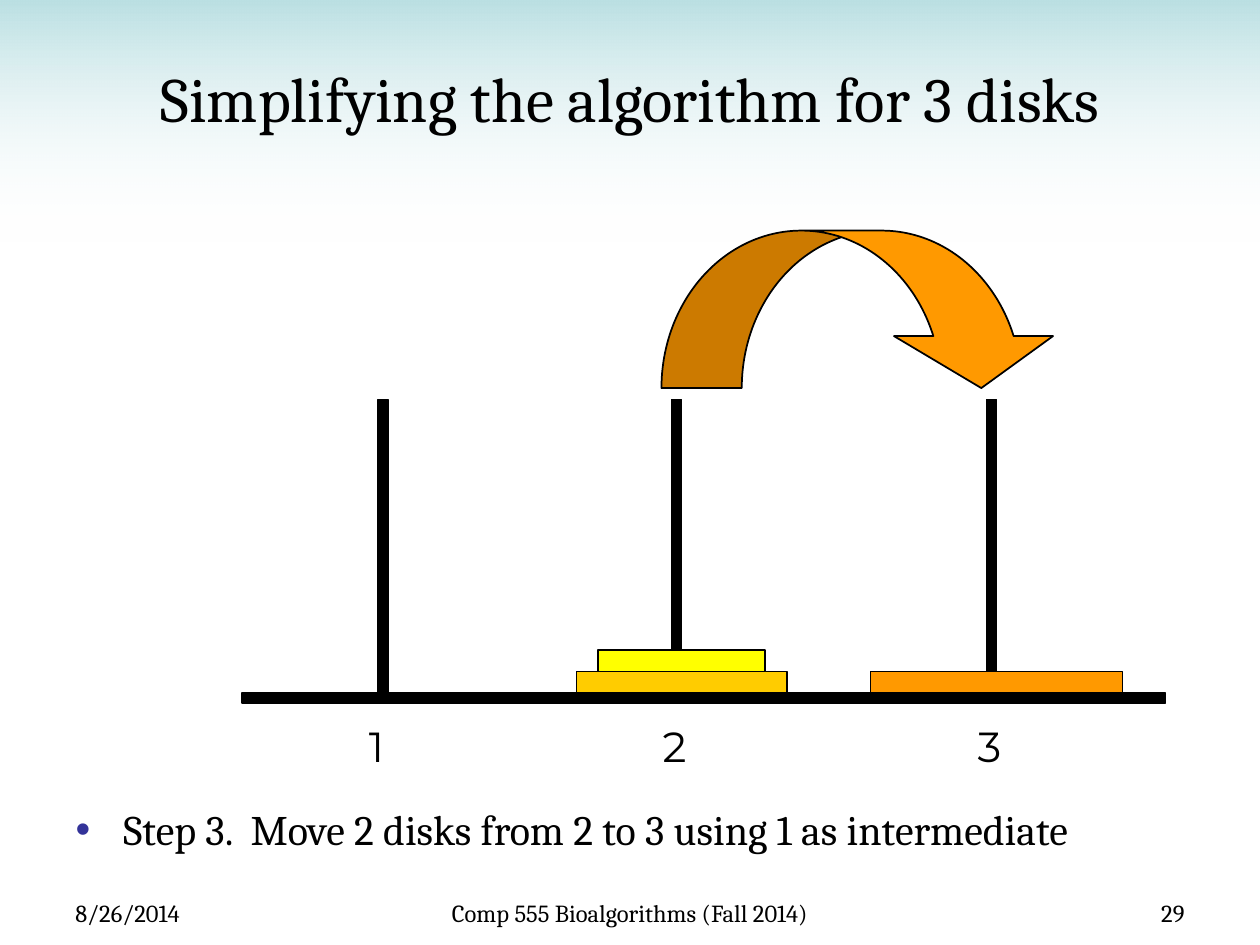
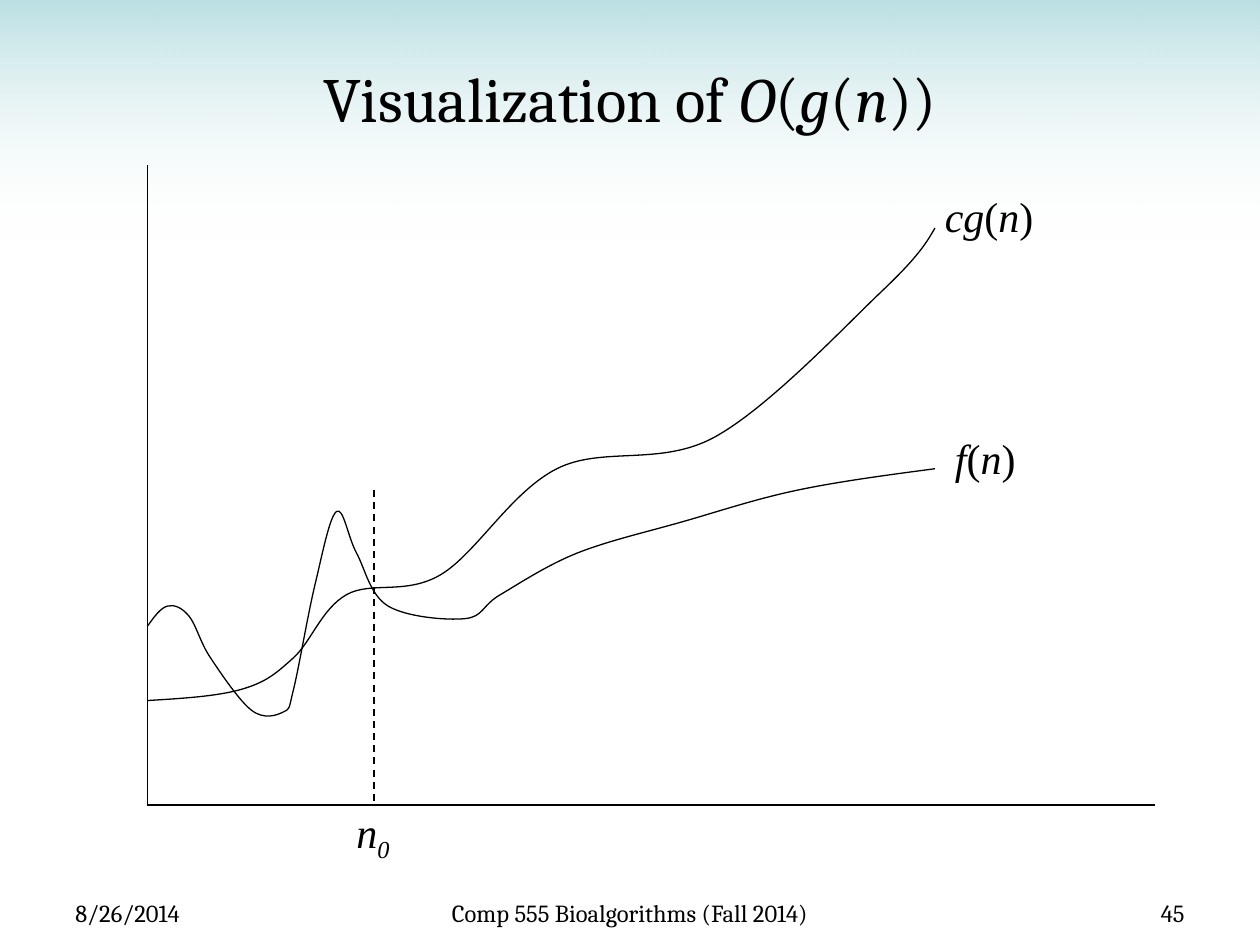
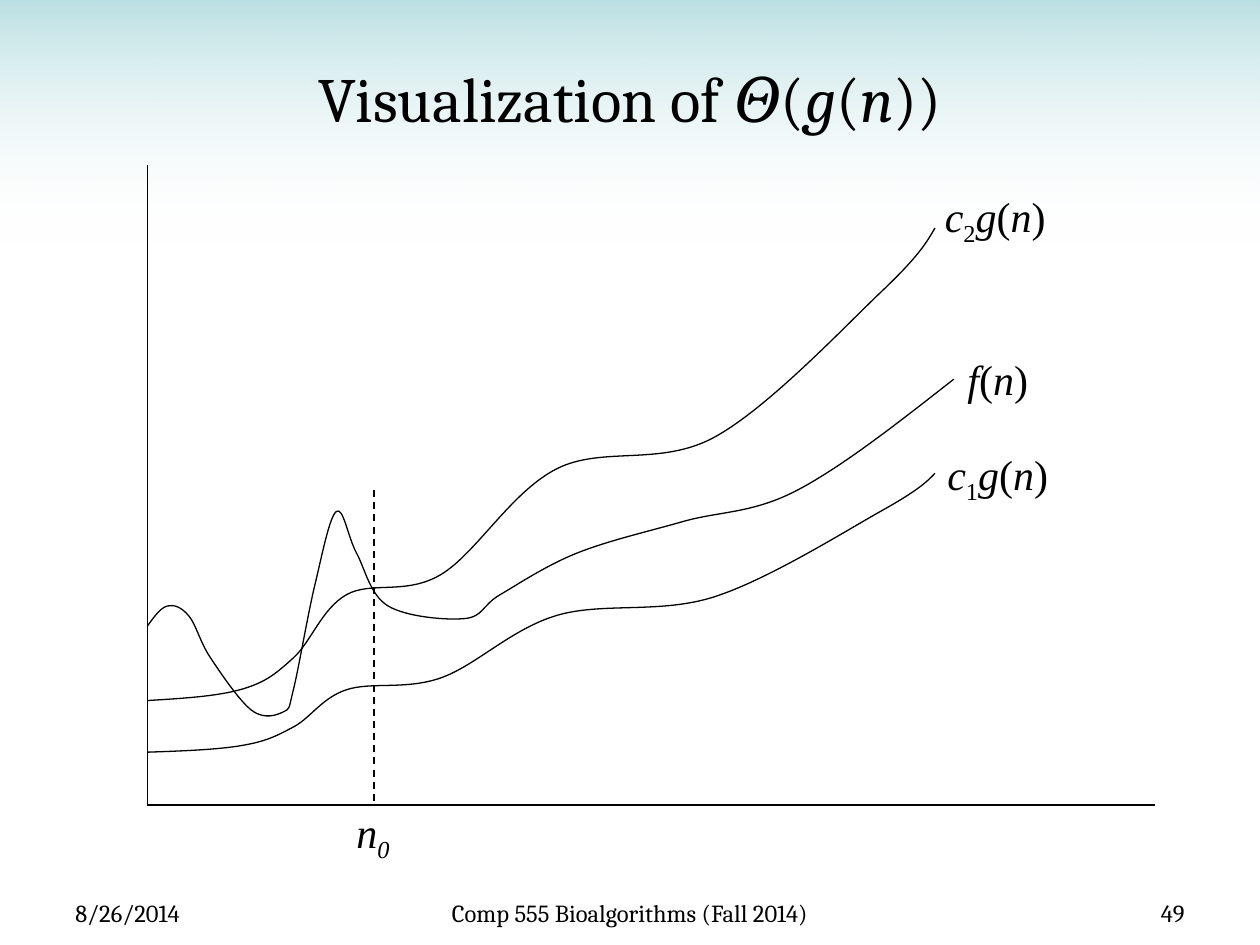
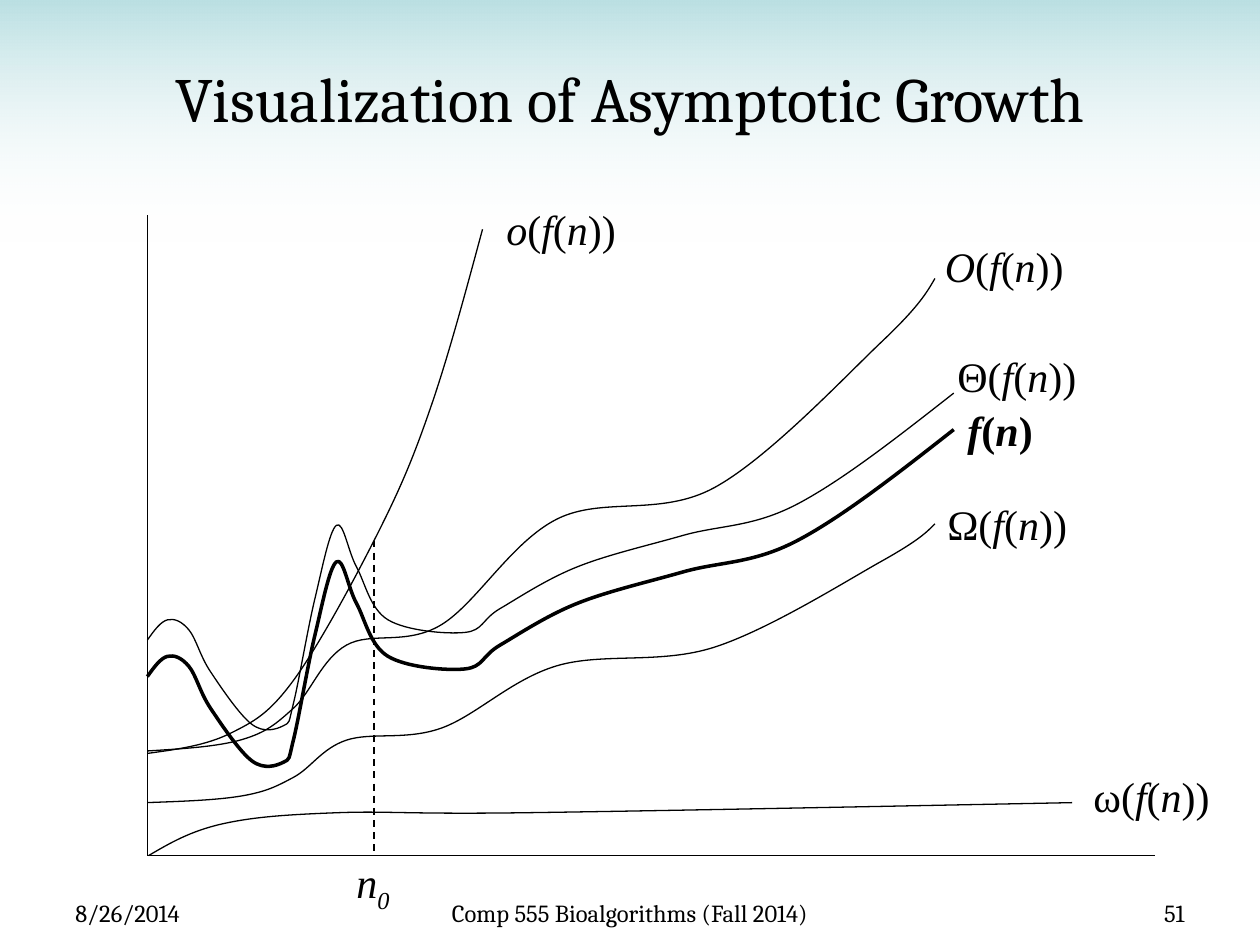
from dataclasses import dataclass

from lxml.etree import SubElement
from pptx import Presentation
from pptx.dml.color import RGBColor
from pptx.enum.dml import MSO_LINE
from pptx.enum.shapes import MSO_CONNECTOR, MSO_SHAPE
from pptx.enum.text import MSO_ANCHOR, MSO_AUTO_SIZE, PP_ALIGN
from pptx.oxml.ns import qn
from pptx.util import Inches, Pt

BLACK = "000000"
BAND_TOP = "BBE0E3"
BAND_BOTTOM = "FDFEFE"
BULLET = "333399"
ORANGE = "FF9900"
GOLD = "FFCC00"
YELLOW = "FFFF00"

SERIF = "Cambria"
SANS = "Montserrat"
MATH = "Times New Roman"
TITLE_SIZE, BODY_SIZE, FOOTER_SIZE = 36, 24, 14

TITLE_AND_BODY = 1
TITLE_ONLY = 5
DATE = "8/26/2014"
COURSE = "Comp 555 Bioalgorithms (Fall 2014)"
FOOTER_TOP, FOOTER_HEIGHT = 7.08, 0.27

PEG_LEFTS = (3, 5.33, 7.83)
PEG_TOP, PEG_WIDTH, PEG_HEIGHT = 3.17, 0.08, 2.33
BASE_TOP = PEG_TOP + PEG_HEIGHT
DISK_HEIGHT = 0.17

AXIS_LEFT, AXIS_RIGHT = 1.17, 9.17
AXIS_TOP, AXIS_BOTTOM = 1.31, 6.39
THRESHOLD, THRESHOLD_HEIGHT = 2.97, 2.5
GROWTH_DROP = 0.4
THIN, THICK = 0.75, 2


def color(value):
    return RGBColor.from_string(value)


def place(shape, left, top, width, height):
    shape.left, shape.top = Inches(left), Inches(top)
    shape.width, shape.height = Inches(width), Inches(height)


def write(paragraph, markup, font_name, size, bold=False):
    for index, piece in enumerate(markup.split("*")):
        if not piece:
            continue
        is_subscript = piece.isdigit() and len(paragraph.runs) > 0
        run = paragraph.add_run()
        run.text = piece
        font = run.font
        font.name, font.size = font_name, Pt(size)
        font.color.rgb = color(BLACK)
        font.bold, font.italic = bold, index % 2 == 1
        if is_subscript:
            font._element.set("baseline", "-25000")


def add_text(slide, left, top, width, height, markup, font_name, size,
             align=PP_ALIGN.LEFT, wrap=True, bold=False):
    box = slide.shapes.add_textbox(
        Inches(left), Inches(top), Inches(width), Inches(height))
    box.text_frame.word_wrap = wrap
    if not wrap:
        box.text_frame.auto_size = MSO_AUTO_SIZE.SHAPE_TO_FIT_TEXT
    paragraph = box.text_frame.paragraphs[0]
    paragraph.alignment = align
    write(paragraph, markup, font_name, size, bold)


def add_label(slide, left, top, width, markup, font_name=MATH, bold=False):
    add_text(slide, left, top, width, 0.5, markup, font_name, BODY_SIZE,
             wrap=False, bold=bold)


def add_filled(slide, kind, left, top, width, height, fill):
    shape = slide.shapes.add_shape(
        kind, Inches(left), Inches(top), Inches(width), Inches(height))
    shape.shadow.inherit = False
    shape.fill.solid()
    shape.fill.fore_color.rgb = color(fill)
    shape.line.color.rgb = color(BLACK)
    shape.line.width = Pt(1)
    return shape


def add_bar(slide, left, top, width, height, fill=BLACK):
    return add_filled(slide, MSO_SHAPE.RECTANGLE, left, top, width, height, fill)


def add_line(slide, start, end, width=THIN, dashed=False):
    x1, y1, x2, y2 = map(Inches, start + end)
    connector = slide.shapes.add_connector(MSO_CONNECTOR.STRAIGHT, x1, y1, x2, y2)
    connector.line.color.rgb = color(BLACK)
    connector.line.width = Pt(width)
    if dashed:
        connector.line.dash_style = MSO_LINE.DASH
    SubElement(connector._element.spPr, qn("a:effectLst"))


def midpoint(first, second):
    return tuple((a + b) / 2 for a, b in zip(first, second))


def smooth_controls(knots):
    arriving, leaving = {}, {}
    for index in range(1, len(knots) - 1):
        before, knot, after = knots[index - 1:index + 2]
        reach = [(b - a) / 6 for a, b in zip(before, after)]
        arriving[index] = tuple(k - r for k, r in zip(knot, reach))
        leaving[index] = tuple(k + r for k, r in zip(knot, reach))
    last = len(knots) - 1
    leaving[0] = midpoint(knots[0], arriving[1])
    arriving[last] = midpoint(knots[last], leaving[last - 1])
    return [point for index in range(last)
            for point in (leaving[index], arriving[index + 1], knots[index + 1])]


def add_curve(slide, knots, width=THIN):
    points = [knots[0]] + smooth_controls(knots)
    start, *rest = [(Inches(x), Inches(y)) for x, y in points]
    builder = slide.shapes.build_freeform(*start)
    builder.add_line_segments(rest, close=False)
    curve = builder.convert_to_shape()
    segments = curve._element.findall(".//" + qn("a:lnTo"))
    outline = segments[0].getparent()
    for index in range(0, len(segments), 3):
        bezier = SubElement(outline, qn("a:cubicBezTo"))
        for segment in segments[index:index + 3]:
            bezier.append(segment[0])
            outline.remove(segment)
    curve.shadow.inherit = False
    curve.fill.background()
    curve.line.color.rgb = color(BLACK)
    curve.line.width = Pt(width)


def move_knots(knots, down, stretch=1):
    first = knots[0][1]
    return [(x, first + (y - first) * stretch + down) for x, y in knots]


UPPER_BOUND = [(1.17, 5.56), (1.92, 5.47), (2.33, 5.22), (2.75, 4.72), (3.5, 4.56),
               (4.42, 3.72), (5.67, 3.47), (7, 2.31), (7.42, 1.81)]
LOWER_BOUND = move_knots(UPPER_BOUND, down=0.41, stretch=0.59)

FIRST_HUMP = [(1.17, 4.97), (1.33, 4.81), (1.5, 4.89), (1.67, 5.22)]
VALLEY = [(2, 5.64), (2.25, 5.65), (2.33, 5.47)]
PEAK = [(2.5, 4.64), (2.67, 4.06), (2.83, 4.39)]
STEADY_RISE = [(3.08, 4.81), (3.69, 4.91), (3.97, 4.72), (4.58, 4.39),
               (5.42, 4.14), (6.33, 3.89)]
FUNCTION = FIRST_HUMP + VALLEY + PEAK + STEADY_RISE
SLOW_FUNCTION = FUNCTION + [(7.42, 3.72)]
FAST_FUNCTION = FUNCTION + [(7.57, 3.01)]

LITTLE_OMEGA = [(1.18, 6.79), (1.76, 6.54), (2.68, 6.45), (4.18, 6.45), (8.51, 6.37)]
LITTLE_O = [(1.17, 5.98), (1.83, 5.82), (2.33, 5.4), (3, 4.23), (3.42, 3.23),
            (3.83, 1.82)]


@dataclass
class Plot:
    knots: list
    label: str
    label_width: float
    label_right: float = 0
    label_up: float = 0.25
    bold: bool = False


O_PLOTS = [
    Plot(UPPER_BOUND, "*cg*(*n*)", 0.9, -0.02, 0.35),
    Plot(SLOW_FUNCTION, "*f*(*n*)", 0.68, 0.06, 0.34),
]
THETA_PLOTS = [
    Plot(UPPER_BOUND, "*c*2*g*(*n*)", 1.02, -0.02, 0.35),
    Plot(FAST_FUNCTION, "*f*(*n*)", 0.68, 0.01),
    Plot(LOWER_BOUND, "*c*1*g*(*n*)", 1.02),
]
GROWTH_PLOTS = [
    Plot(move_knots(UPPER_BOUND, GROWTH_DROP), "*O*(*f*(*n*))", 1.15, -0.02, 0.35),
    Plot(move_knots(FAST_FUNCTION, GROWTH_DROP), "*f*(*n*)", 0.72, 0.01, bold=True),
    Plot(move_knots(LOWER_BOUND, GROWTH_DROP), "Ω(*f*(*n*))", 1.16),
    Plot(LITTLE_OMEGA, "ω(*f*(*n*))", 1.13, 0.07, 0.3),
    Plot(LITTLE_O, "*o*(*f*(*n*))", 1.07, 0.09),
    Plot(move_knots(FAST_FUNCTION, 0.11), "Θ(*f*(*n*))", 1.15, -0.07, 0.39),
]


def add_band(presentation, slide):
    band = add_bar(slide, 0, 0, 10, 1.92, BAND_TOP)
    band.line.fill.background()
    band.fill.gradient()
    band.fill.gradient_angle = 270
    for stop, shade in zip(band.fill.gradient_stops, (BAND_TOP, BAND_BOTTOM)):
        stop.color.rgb = color(shade)
    bottom_shade = band._element.findall(".//" + qn("a:gs"))[-1][0]
    SubElement(bottom_shade, qn("a:alpha"), val="0")
    presentation.slide_master.shapes.element.insert(2, band.element)


def add_footer(slide, number):
    for left, width, text, align in (
            (0.5, 2.33, DATE, PP_ALIGN.LEFT),
            (2.96, 4.08, COURSE, PP_ALIGN.CENTER),
            (7.17, 2.33, str(number), PP_ALIGN.RIGHT)):
        add_text(slide, left, FOOTER_TOP, width, FOOTER_HEIGHT, text,
                 SERIF, FOOTER_SIZE, align)


def add_slide(presentation, title, number, layout=TITLE_ONLY):
    slide = presentation.slides.add_slide(presentation.slide_layouts[layout])
    place(slide.shapes.title, 0.5, 0.3, 9, 0.95)
    frame = slide.shapes.title.text_frame
    frame.vertical_anchor = MSO_ANCHOR.MIDDLE
    frame.paragraphs[0].alignment = PP_ALIGN.CENTER
    write(frame.paragraphs[0], title, SERIF, TITLE_SIZE)
    add_footer(slide, number)
    return slide


def add_bullet(slide, text):
    body = slide.placeholders[1]
    place(body, 0.5, 6.33, 9, 0.67)
    paragraph = body.text_frame.paragraphs[0]
    properties = paragraph._p.get_or_add_pPr()
    properties.set("marL", str(Inches(0.38)))
    properties.set("indent", str(-Inches(0.38)))
    bullet_color = SubElement(properties, qn("a:buClr"))
    SubElement(bullet_color, qn("a:srgbClr"), val=BULLET)
    SubElement(properties, qn("a:buChar"), char="•")
    paragraph.space_before = Pt(0)
    write(paragraph, text, SERIF, BODY_SIZE)


def add_pegs(slide):
    add_bar(slide, 1.92, BASE_TOP, 7.33, PEG_WIDTH)
    for number, left in enumerate(PEG_LEFTS, 1):
        add_bar(slide, left, PEG_TOP, PEG_WIDTH, PEG_HEIGHT)
        add_label(slide, left - 0.17, BASE_TOP + 0.17, 0.42, str(number), SANS)


def add_disk(slide, peg, level, width, fill):
    center = PEG_LEFTS[peg - 1] + PEG_WIDTH
    add_bar(slide, center - width / 2, BASE_TOP - level * DISK_HEIGHT,
            width, DISK_HEIGHT, fill)


def add_move_arrow(slide):
    arrow = add_filled(slide, MSO_SHAPE.CURVED_DOWN_ARROW,
                       5.25, 1.83, 3.17, 1.25, ORANGE)
    for index, value in enumerate((0.51, 1.01, 0.33)):
        arrow.adjustments[index] = value


def add_axes(slide, drop):
    top, bottom = AXIS_TOP + drop, AXIS_BOTTOM + drop
    add_line(slide, (AXIS_LEFT, top), (AXIS_LEFT, bottom))
    add_line(slide, (AXIS_LEFT, bottom), (AXIS_RIGHT, bottom))
    add_line(slide, (THRESHOLD, bottom - THRESHOLD_HEIGHT), (THRESHOLD, bottom),
             width=1, dashed=True)
    add_label(slide, THRESHOLD - 0.24, bottom - 0.04, 0.48, "*n**0*")


def add_plot(slide, plot):
    add_curve(slide, plot.knots, THICK if plot.bold else THIN)
    end_x, end_y = plot.knots[-1]
    add_label(slide, end_x + plot.label_right, end_y - plot.label_up,
              plot.label_width, plot.label, bold=plot.bold)


def add_hanoi_slide(presentation):
    slide = add_slide(presentation, "Simplifying the algorithm for 3 disks", 29,
                      TITLE_AND_BODY)
    add_band(presentation, slide)
    add_bullet(slide, "Step 3.  Move 2 disks from 2 to 3 using 1 as intermediate")
    add_pegs(slide)
    add_disk(slide, peg=3, level=1, width=2, fill=ORANGE)
    add_disk(slide, peg=2, level=1, width=1.67, fill=GOLD)
    add_disk(slide, peg=2, level=2, width=1.33, fill=YELLOW)
    add_move_arrow(slide)


def add_plot_slide(presentation, title, number, plots, drop=0):
    slide = add_slide(presentation, title, number)
    add_axes(slide, drop)
    for plot in plots:
        add_plot(slide, plot)


def main():
    presentation = Presentation()
    presentation.slide_width, presentation.slide_height = Inches(10), Inches(7.5)
    add_hanoi_slide(presentation)
    add_plot_slide(presentation, "Visualization of *O*(*g*(*n*))", 45, O_PLOTS)
    add_plot_slide(presentation, "Visualization of *Θ*(*g*(*n*))", 49, THETA_PLOTS)
    add_plot_slide(presentation, "Visualization of Asymptotic Growth", 51,
                   GROWTH_PLOTS, GROWTH_DROP)
    presentation.save("out.pptx")


if __name__ == "__main__":
    main()
